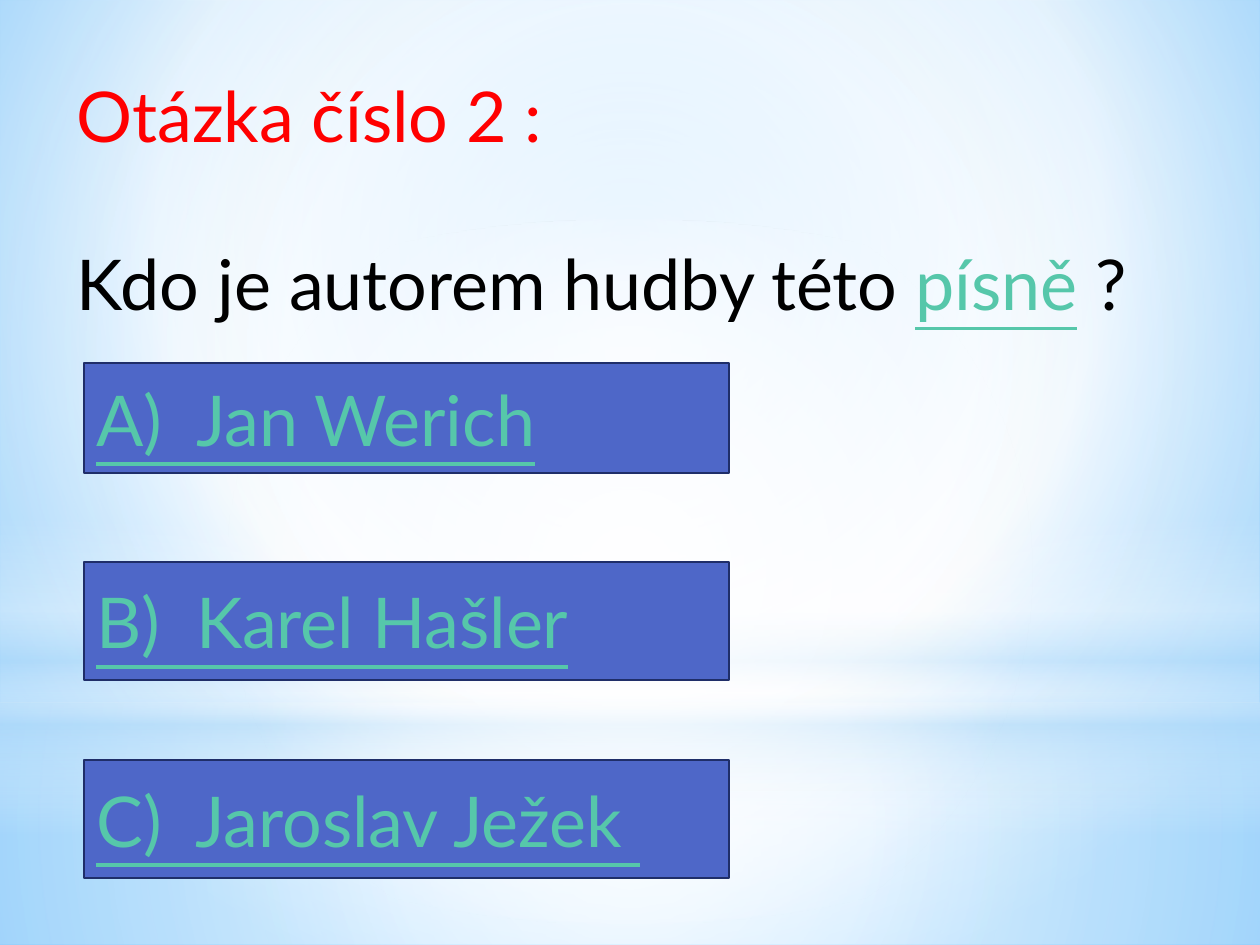
from lxml.etree import SubElement
from pptx import Presentation
from pptx.dml.color import RGBColor
from pptx.enum.shapes import MSO_SHAPE as SHAPE
from pptx.enum.text import MSO_ANCHOR as ANCHOR, MSO_AUTO_SIZE as AUTO, PP_ALIGN as ALIGN
from pptx.oxml.ns import qn
from pptx.util import Emu, Pt

FONT, SIZE = "Lato", 40
C = {"red": "FF0000", "black": "000000", "link": "56C7AA", "box": "4E67C8",
     "edge": "1F2E69", "white": "FFFFFF", "haze": "B4DCFA",
     "sky": "9ED5FF", "deep": "5BB9FF"}

# Each paragraph is a list of (text, colour, underlined)
QUESTION = [
    [("Otázka číslo 2 :", "red", False)],
    [("Kdo je autorem hudby této ", "black", False),
     ("písně", "link", True), (" ?", "black", False)],
]
# (text, top, height)
ANSWERS = [("A)  Jan Werich", 363, 110),
           ("B)  Karel Hašler", 562, 118),
           ("C)  Jaroslav Ježek ", 760, 118)]
ANSWER_LEFT, ANSWER_WIDTH = 84, 645

# Stops are (position %, colour, opacity %)
SKY = [(0, "sky", 100), (60, "white", 100), (100, "deep", 100)]
SKY_FOCUS = (20, 10, 20, 60)
CENTRE = (50, 50, 50, 50)
# (shape, box, stops, focus); without a focus the gradient runs downwards
GLOWS = [
    (SHAPE.RECTANGLE, (0, 703, 1260, 242),
     [(0, "white", 91), (37, "white", 76), (100, "haze", 79)], CENTRE),
    (SHAPE.RECTANGLE, (0, 0, 1260, 703),
     [(0, "white", 89), (48, "white", 62), (100, "haze", 79)], CENTRE),
    (SHAPE.RECTANGLE, (0, 519, 1260, 315),
     [(0, "white", 0), (29, "white", 30), (45, "haze", 40),
      (55, "white", 26), (65, "haze", 60), (100, "white", 0)], None),
    (SHAPE.OVAL, (0, 220, 1260, 703),
     [(0, "white", 100), (56, "white", 0)], CENTRE),
]


def px(n):
    return Emu(round(n * 914400 / 126))


def rgb(name):
    return RGBColor.from_string(C[name])


def set_gradient(fill, element, stops, focus):
    """Fill with stops that python-pptx cannot set: opacity and circular paths."""
    fill.gradient()
    grad = element.find(".//" + qn("a:gradFill"))
    for child in list(grad):
        grad.remove(child)
    gs_list = SubElement(grad, qn("a:gsLst"))
    for pos, colour, opacity in stops:
        gs = SubElement(gs_list, qn("a:gs"), pos=str(pos * 1000))
        clr = SubElement(gs, qn("a:srgbClr"), val=C[colour])
        if opacity < 100:
            SubElement(clr, qn("a:alpha"), val=str(opacity * 1000))
    if focus:
        way = SubElement(grad, qn("a:path"), path="circle")
        sides = {side: str(v * 1000) for side, v in zip("ltrb", focus)}
        SubElement(way, qn("a:fillToRect"), **sides)
    else:
        SubElement(grad, qn("a:lin"), ang="5400000", scaled="0")


def add_block(s, kind, box):
    sp = s.shapes.add_shape(kind, *map(px, box))
    sp.shadow.inherit = False
    return sp


def format_run(r, colour, underline):
    r.font.name, r.font.size = FONT, Pt(SIZE)
    r.font.color.rgb = rgb(colour)
    r.font.underline = underline


def add_question(s):
    sp = s.shapes.title
    sp.left, sp.top, sp.width, sp.height = map(px, (64, 66, 1132, 267))
    tf = sp.text_frame
    tf.word_wrap, tf.auto_size = True, AUTO.NONE
    tf.vertical_anchor = ANCHOR.TOP
    for i, parts in enumerate(QUESTION):
        p = tf.add_paragraph() if i else tf.paragraphs[0]
        p.alignment = ALIGN.LEFT
        p.space_before = Pt(SIZE * 1.2 * i)
        for text, colour, underline in parts:
            r = p.add_run()
            r.text = text
            format_run(r, colour, underline)


def add_answer(s, text, top, height):
    sp = add_block(s, SHAPE.RECTANGLE, (ANSWER_LEFT, top, ANSWER_WIDTH, height))
    sp.fill.solid()
    sp.fill.fore_color.rgb = rgb("box")
    sp.line.color.rgb = rgb("edge")
    sp.line.width = Pt(1.25)
    tf = sp.text_frame
    tf.text = text
    tf.word_wrap, tf.vertical_anchor = True, ANCHOR.MIDDLE
    p = tf.paragraphs[0]
    p.alignment = ALIGN.LEFT
    format_run(p.runs[0], "link", True)


def main():
    prs = Presentation()
    prs.slide_width, prs.slide_height = px(1260), px(945)
    s = prs.slides.add_slide(prs.slide_layouts[5])
    set_gradient(s.background.fill, s._element, SKY, SKY_FOCUS)
    for kind, box, stops, focus in GLOWS:
        sp = add_block(s, kind, box)
        sp.line.fill.background()
        set_gradient(sp.fill, sp._element, stops, focus)
    add_question(s)
    s.shapes._spTree.append(s.shapes.title._element)  # in front of the glows
    for answer in ANSWERS:
        add_answer(s, *answer)
    prs.save("out.pptx")


if __name__ == "__main__":
    main()
